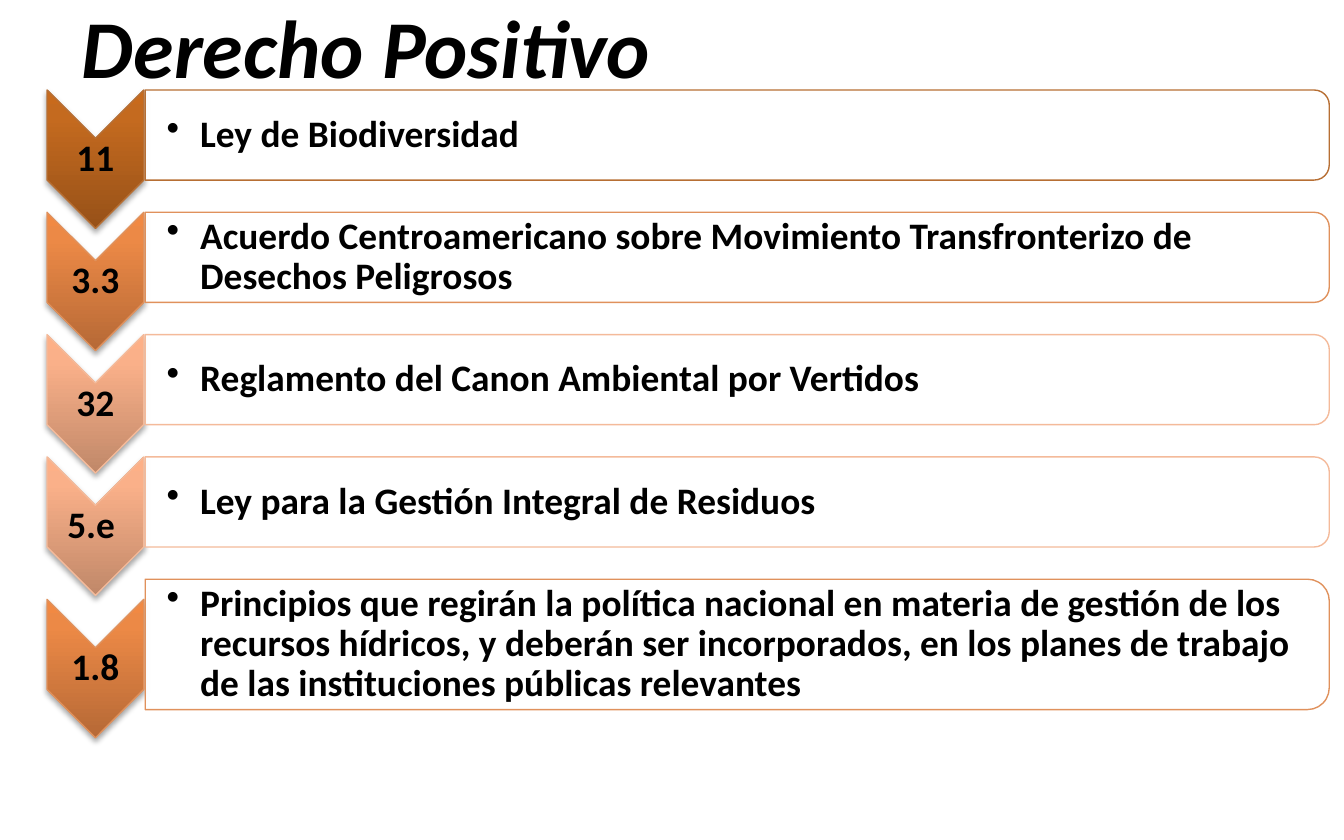
from dataclasses import dataclass

from lxml.etree import SubElement
from pptx import Presentation
from pptx.dml.color import RGBColor
from pptx.enum.shapes import MSO_SHAPE
from pptx.enum.text import MSO_ANCHOR, PP_ALIGN
from pptx.oxml import parse_xml
from pptx.oxml.ns import nsdecls, qn
from pptx.util import Inches, Pt


@dataclass(frozen=True)
class Tone:
    line: str
    gradient: tuple


@dataclass(frozen=True)
class Theme:
    font: str = "Calibri"
    text: str = "000000"
    bar: str = "FFFFFF"
    title_size: int = 44
    body_size: int = 20


THEME = Theme()
BROWN = Tone("B76F34", ((0, "975118"), (80, "C46A1F"), (100, "C86A1C")))
ORANGE = Tone("E0915C", ((0, "B66936"), (80, "EC8946"), (100, "F18943")))
PEACH = Tone("F4BA9A", ((0, "C08869"), (80, "FAB089"), (100, "FDB087")))

TITLE = "Derecho Positivo"
# Article number, text, tone, bar height
ROWS = [
    ("11", "Ley de Biodiversidad", BROWN, 0.67),
    ("3.3", "Acuerdo Centroamericano sobre Movimiento Transfronterizo de "
     "Desechos Peligrosos", ORANGE, 0.67),
    ("32", "Reglamento del Canon Ambiental por Vertidos", PEACH, 0.67),
    ("5.e ", "Ley para la Gestión Integral de Residuos", PEACH, 0.67),
    ("1.8", "Principios que regirán la política nacional en materia de gestión "
     "de los recursos hídricos, y deberán ser incorporados, en los planes de "
     "trabajo de las instituciones públicas relevantes", ORANGE, 0.97),
]

SLIDE_WIDTH, SLIDE_HEIGHT = 10, 6.25
FIRST_TOP, ROW_GAP, BASE_HEIGHT = 0.67, 0.24, 0.67
CHEVRON_LEFT, CHEVRON_WIDTH, CHEVRON_HEIGHT = 0.35, 0.72, 1.03
BAR_LEFT, BAR_WIDTH = 1.08, 8.81


def style_font(font, size, italic=False):
    font.name, font.size = THEME.font, Pt(size)
    font.bold, font.italic = True, italic
    font.color.rgb = RGBColor.from_string(THEME.text)


def add_quarter_turned(slide, preset, left, top, width, height, line):
    """Add a shape turned by 90 degrees that shows in the given frame."""
    shape = slide.shapes.add_shape(
        preset, Inches(left + (width - height) / 2),
        Inches(top + (height - width) / 2), Inches(height), Inches(width))
    shape.rotation = 90
    shape.shadow.inherit = False
    shape.line.color.rgb = RGBColor.from_string(line)
    shape.line.width = Pt(0.75)
    return shape


def add_chevron(slide, top, tone):
    chevron = add_quarter_turned(slide, MSO_SHAPE.CHEVRON, CHEVRON_LEFT, top,
                                 CHEVRON_WIDTH, CHEVRON_HEIGHT, tone.line)
    stops = "".join(
        f'<a:gs pos="{position * 1000}"><a:srgbClr val="{color}"/></a:gs>'
        for position, color in tone.gradient)
    properties = chevron.element.spPr
    properties.find(qn("a:prstGeom")).addnext(parse_xml(
        f'<a:gradFill {nsdecls("a")} rotWithShape="0"><a:gsLst>{stops}</a:gsLst>'
        '<a:lin ang="16200000" scaled="0"/></a:gradFill>'))
    properties.find(qn("a:effectLst")).append(parse_xml(
        f'<a:outerShdw {nsdecls("a")} blurRad="{Pt(3.1)}" dist="{Pt(1.8)}" '
        'dir="5400000" rotWithShape="0"><a:srgbClr val="000000">'
        '<a:alpha val="35000"/></a:srgbClr></a:outerShdw>'))


def add_bar(slide, top, height, tone):
    bar = add_quarter_turned(slide, MSO_SHAPE.ROUND_2_SAME_RECTANGLE, BAR_LEFT,
                             top, BAR_WIDTH, height, tone.line)
    bar.fill.solid()
    bar.fill.fore_color.rgb = RGBColor.from_string(THEME.bar)
    color = bar.element.spPr.find(qn("a:solidFill")).find(qn("a:srgbClr"))
    SubElement(color, qn("a:alpha"), val="90000")


def add_text(slide, text, left, top, width, height, margin_left=0.01, bullet=False):
    box = slide.shapes.add_textbox(
        Inches(left), Inches(top), Inches(width), Inches(height))
    frame = box.text_frame
    frame.word_wrap = True
    frame.vertical_anchor = MSO_ANCHOR.MIDDLE
    frame.margin_left = Inches(margin_left)
    frame.margin_top = frame.margin_right = frame.margin_bottom = Inches(0.01)
    paragraph = frame.paragraphs[0]
    paragraph.text = text
    paragraph.line_spacing = 0.9
    paragraph.alignment = PP_ALIGN.LEFT if bullet else PP_ALIGN.CENTER
    if bullet:
        properties = paragraph._p.get_or_add_pPr()
        properties.set("marL", str(Inches(0.25)))
        properties.set("indent", str(Inches(-0.25)))
        SubElement(properties, qn("a:buChar"), char="•")
    style_font(paragraph.font, THEME.body_size)


def add_title(slide):
    title = slide.shapes.title
    title.left, title.top = Inches(0.51), Inches(-0.18)
    title.width, title.height = Inches(9), Inches(1.04)
    title.text_frame.text = TITLE
    title.text_frame.vertical_anchor = MSO_ANCHOR.MIDDLE
    paragraph = title.text_frame.paragraphs[0]
    paragraph.alignment = PP_ALIGN.LEFT
    style_font(paragraph.font, THEME.title_size, italic=True)


def main():
    presentation = Presentation()
    presentation.slide_width = Inches(SLIDE_WIDTH)
    presentation.slide_height = Inches(SLIDE_HEIGHT)
    slide = presentation.slides.add_slide(presentation.slide_layouts[5])
    add_title(slide)

    top = FIRST_TOP
    for number, text, tone, height in ROWS:
        chevron_top = top + (height - BASE_HEIGHT) / 2
        notch = CHEVRON_WIDTH / 2
        inset = 0.05 * height
        add_chevron(slide, chevron_top, tone)
        add_text(slide, number, CHEVRON_LEFT, chevron_top + notch,
                 CHEVRON_WIDTH, CHEVRON_HEIGHT - 2 * notch)
        add_bar(slide, top, height, tone)
        add_text(slide, text, BAR_LEFT, top + inset, BAR_WIDTH - inset,
                 height - 2 * inset, margin_left=0.16, bullet=True)
        top += height + ROW_GAP

    presentation.save("out.pptx")


if __name__ == "__main__":
    main()
